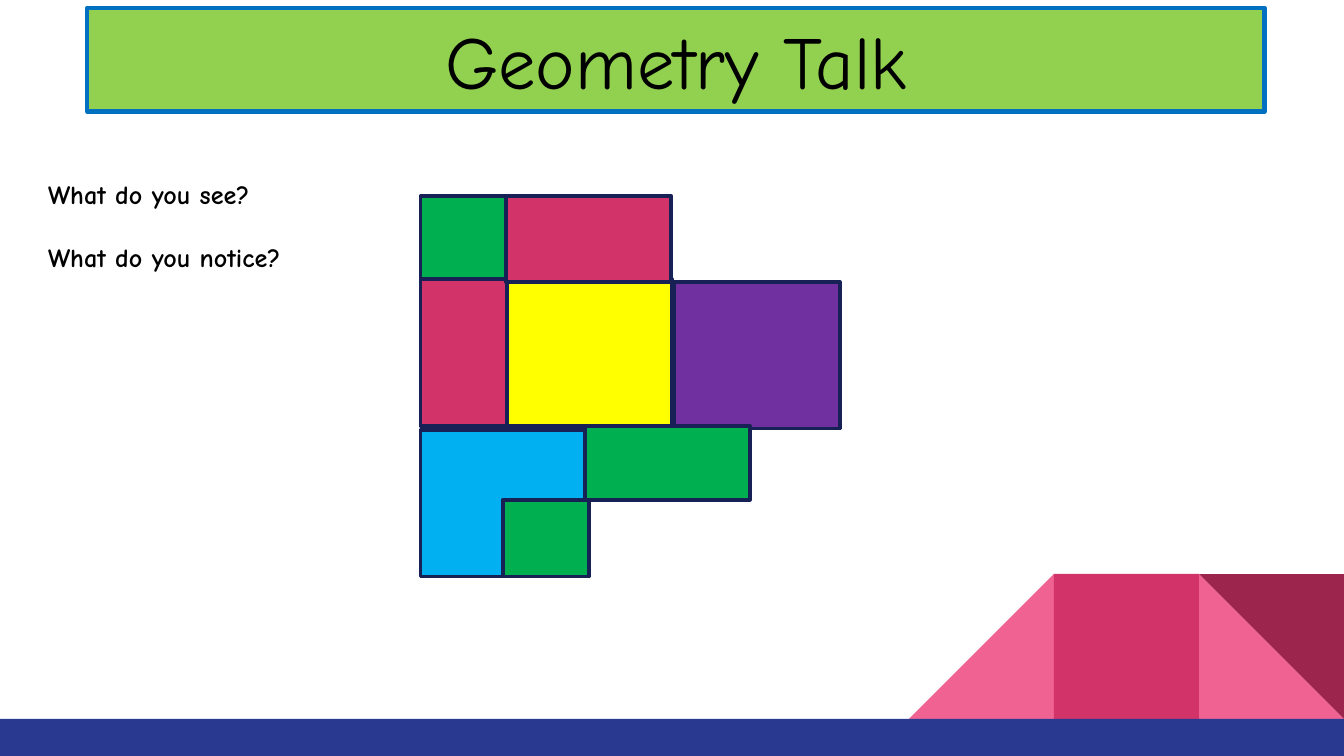
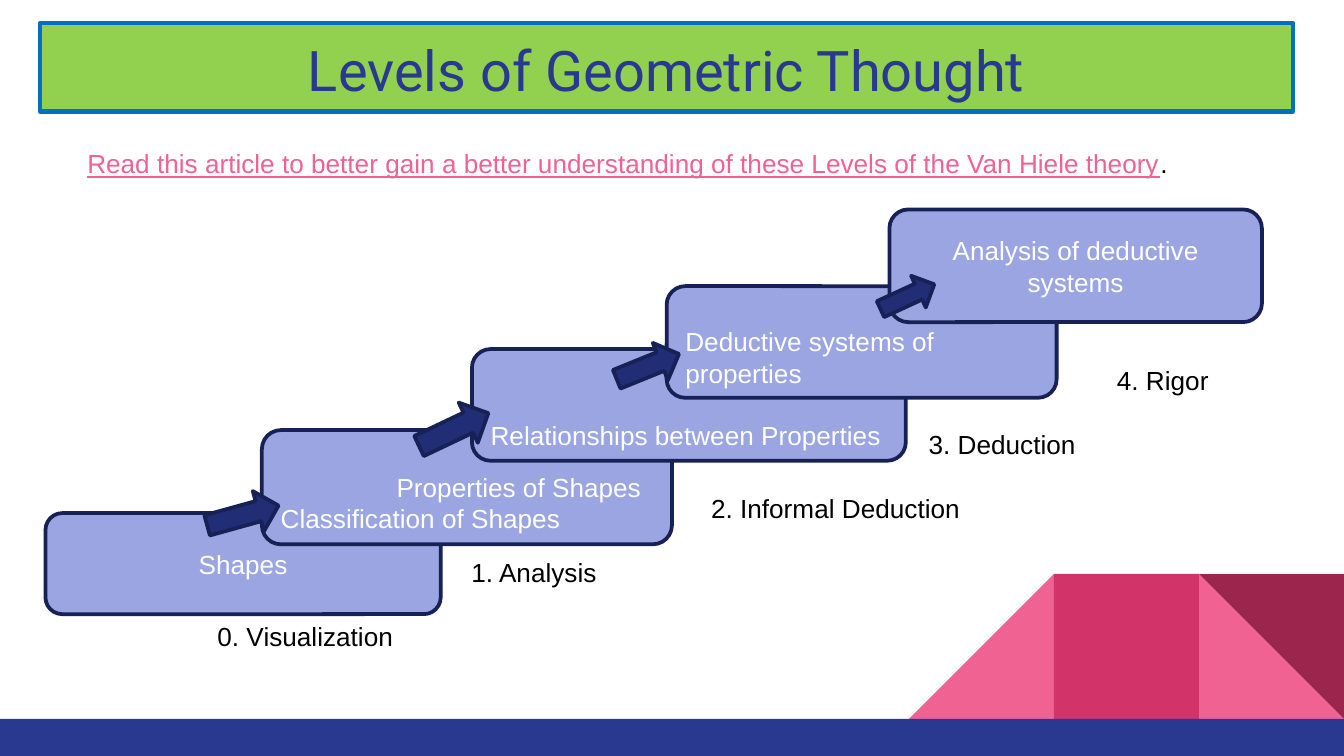
from pptx import Presentation
from pptx.dml.color import RGBColor
from pptx.enum.shapes import MSO_SHAPE
from pptx.enum.text import MSO_ANCHOR, MSO_AUTO_SIZE, PP_ALIGN
from pptx.util import Cm, Pt

RECTANGLE = MSO_SHAPE.RECTANGLE
ROUNDED = MSO_SHAPE.ROUNDED_RECTANGLE
TRIANGLE = MSO_SHAPE.RIGHT_TRIANGLE
ARROW = MSO_SHAPE.RIGHT_ARROW
LEFT, CENTER = PP_ALIGN.LEFT, PP_ALIGN.CENTER
TOP, MIDDLE = MSO_ANCHOR.TOP, MSO_ANCHOR.MIDDLE

COLORS = {
    "black": "000000", "white": "FFFFFF", "navy": "2A3990", "outline": "182156",
    "arrow": "212D74", "step": "9BA5E2", "pink": "F06292", "crimson": "D23369",
    "maroon": "9C254D", "banner": "92D050", "banner_line": "0070C0",
    "purple": "7030A0", "yellow": "FFFF00", "green": "00B050", "sky": "00B0F0",
}
WIDTH, HEIGHT = 25.4, 14.29
BAND_TOP, BAND_HEIGHT = 13.59, 0.7
TILE = 2.74
BODY_SIZE = 14
TEXT_LINE = 0.57
BLOCK_WIDTH, BLOCK_HEIGHT, NARROW = 3.12, 2.77, 1.63


def color(name):
    return RGBColor.from_string(COLORS[name])


def paint(shape, fill, line=None, line_width=2):
    shape.fill.solid()
    shape.fill.fore_color.rgb = color(fill)
    if line:
        shape.line.color.rgb = color(line)
        shape.line.width = Pt(line_width)
    else:
        shape.line.fill.background()


def add_figure(slide, kind, box, fill, line=None, rotation=0):
    shape = slide.shapes.add_shape(kind, *map(Cm, box))
    shape.shadow.inherit = False
    shape.rotation = rotation
    paint(shape, fill, line)
    return shape


def set_font(font, size, name, shade):
    font.size = Pt(size)
    font.name = name
    font.color.rgb = color(shade)


def add_title(slide, text, box, size, font_name, shade, inset):
    title = slide.shapes.title
    title.left, title.top, title.width, title.height = map(Cm, box)
    paint(title, "banner", "banner_line", 2.25)
    frame = title.text_frame
    frame.text = text
    frame.auto_size = MSO_AUTO_SIZE.NONE
    frame.vertical_anchor = TOP
    frame.margin_top = frame.margin_bottom = Cm(inset)
    paragraph = frame.paragraphs[0]
    paragraph.alignment = CENTER
    set_font(paragraph.font, size, font_name, shade)


def write_lines(frame, lines, shade, font_name="Arial", alignment=LEFT, gap=0, bold=False):
    for number, (text, indent) in enumerate(lines):
        paragraph = frame.add_paragraph() if number else frame.paragraphs[0]
        paragraph.text = text
        paragraph.alignment = alignment
        paragraph.space_before = Pt(gap if number else 0)
        set_font(paragraph.font, BODY_SIZE, font_name, shade)
        paragraph.font.bold = bold
        if indent:
            paragraph._p.get_or_add_pPr().set("marL", str(Cm(indent)))


def add_text(slide, box, lines, wrap=True, **style):
    frame = slide.shapes.add_textbox(*map(Cm, box)).text_frame
    frame.word_wrap = wrap
    write_lines(frame, lines, "black", **style)
    return frame


def add_step(slide, box, lines, alignment, lines_down):
    frame = add_figure(slide, ROUNDED, box, "step", "outline").text_frame
    frame.word_wrap = True
    frame.vertical_anchor = MIDDLE
    frame.margin_top = Cm(0.13 + lines_down * TEXT_LINE)
    write_lines(frame, lines, "white", alignment=alignment)


def decorate_layout(layout, slide):
    top = BAND_TOP - TILE
    left, middle, right = (WIDTH - count * TILE for count in (3, 2, 1))
    near = add_figure(slide, TRIANGLE, (right, top, TILE, TILE), "pink")
    far = add_figure(slide, TRIANGLE, (left, top, TILE, TILE), "pink")
    far.element.spPr.get_or_add_xfrm().set("flipH", "1")
    square = add_figure(slide, RECTANGLE, (middle, top, TILE, TILE), "crimson")
    corner = add_figure(slide, TRIANGLE, (right, top, TILE, TILE), "maroon", rotation=180)
    band = add_figure(slide, RECTANGLE, (0, BAND_TOP, WIDTH, BAND_HEIGHT), "navy")
    for number, shape in enumerate((near, far, square, corner, band), 101):
        shape.element.nvSpPr.cNvPr.set("id", str(number))
        layout.shapes.element.append(shape.element)


def build_geometry_talk(slide):
    add_title(slide, "Geometry Talk", (1.65, 0.15, 22.25, 1.96), 40, "Comic Neue", "black", 0.13)
    blocks = [
        ("purple", 12.75, 5.33, BLOCK_WIDTH, BLOCK_HEIGHT),
        ("yellow", 9.58, 5.28, BLOCK_WIDTH, BLOCK_HEIGHT),
        ("green", 7.95, 3.71, NARROW, 1.57),
        ("crimson", 7.95, 5.28, NARROW, BLOCK_HEIGHT),
        ("sky", 7.95, 8.13, BLOCK_WIDTH, BLOCK_HEIGHT),
        ("crimson", 9.56, 3.7, BLOCK_WIDTH, NARROW),
        ("green", 9.5, 9.45, NARROW, 1.45),
        ("green", 11.05, 8.05, BLOCK_WIDTH, 1.4),
    ]
    for fill, *box in blocks:
        add_figure(slide, RECTANGLE, box, fill, "outline")
    questions = [("What do you see?", 0), ("What do you notice?", 0)]
    add_text(slide, (0.66, 3.25, 5.56, 2.64), questions, wrap=False,
             font_name="Comic Neue", gap=17, bold=True)


def build_levels(slide):
    add_title(slide, "Levels of Geometric Thought", (0.76, 0.43, 23.67, 1.68), 30, "Roboto", "navy", 0.25)
    steps = [
        ((0.86, 9.7, 7.47, 1.91), [("Shapes", 0)], CENTER, 0),
        ((4.95, 8.13, 7.75, 2.16),
         [("Properties of Shapes", 2.19), ("Classification of Shapes", 0)], LEFT, 1),
        ((8.92, 6.6, 8.2, 2.11), [("Relationships between Properties", 0)], LEFT, 2),
        ((12.6, 5.41, 7.37, 2.11), [("Deductive systems of properties", 0)], LEFT, 1),
        ((16.81, 3.96, 7.04, 2.13), [("Analysis of deductive systems", 0)], CENTER, 0),
    ]
    for step in steps:
        add_step(slide, *step)
    arrows = [
        ((3.89, 9.35, 1.4, 0.79), 344.5),
        ((7.85, 7.7, 1.45, 0.84), 334.6),
        ((11.61, 6.55, 1.27, 0.76), 337.9),
        ((16.59, 5.28, 1.12, 0.66), 335.2),
    ]
    for box, rotation in arrows:
        add_figure(slide, ARROW, box, "arrow", "outline", rotation)
    levels = [("4. Rigor", 17), ("3. Deduction", 13.44), ("2. Informal Deduction", 9.33),
              ("1. Analysis", 4.8), ("0. Visualization", 0)]
    add_text(slide, (3.86, 6.76, 20.65, 5.64), levels, gap=17.5)
    article = "Read this article to better gain a better understanding of these Levels of the Van Hiele theory"
    frame = add_text(slide, (1.4, 2.67, 21.03, 0.86), [(article, 0)], wrap=False)
    paragraph = frame.paragraphs[0]
    link = paragraph.runs[0].font
    link.underline = True
    link.color.rgb = color("pink")
    paragraph.add_run().text = "."


def main():
    presentation = Presentation()
    presentation.slide_width, presentation.slide_height = Cm(WIDTH), Cm(HEIGHT)
    layout = presentation.slide_layouts[5]
    talk, levels = (presentation.slides.add_slide(layout) for _ in range(2))
    decorate_layout(layout, talk)
    build_geometry_talk(talk)
    build_levels(levels)
    presentation.save("out.pptx")


if __name__ == "__main__":
    main()
